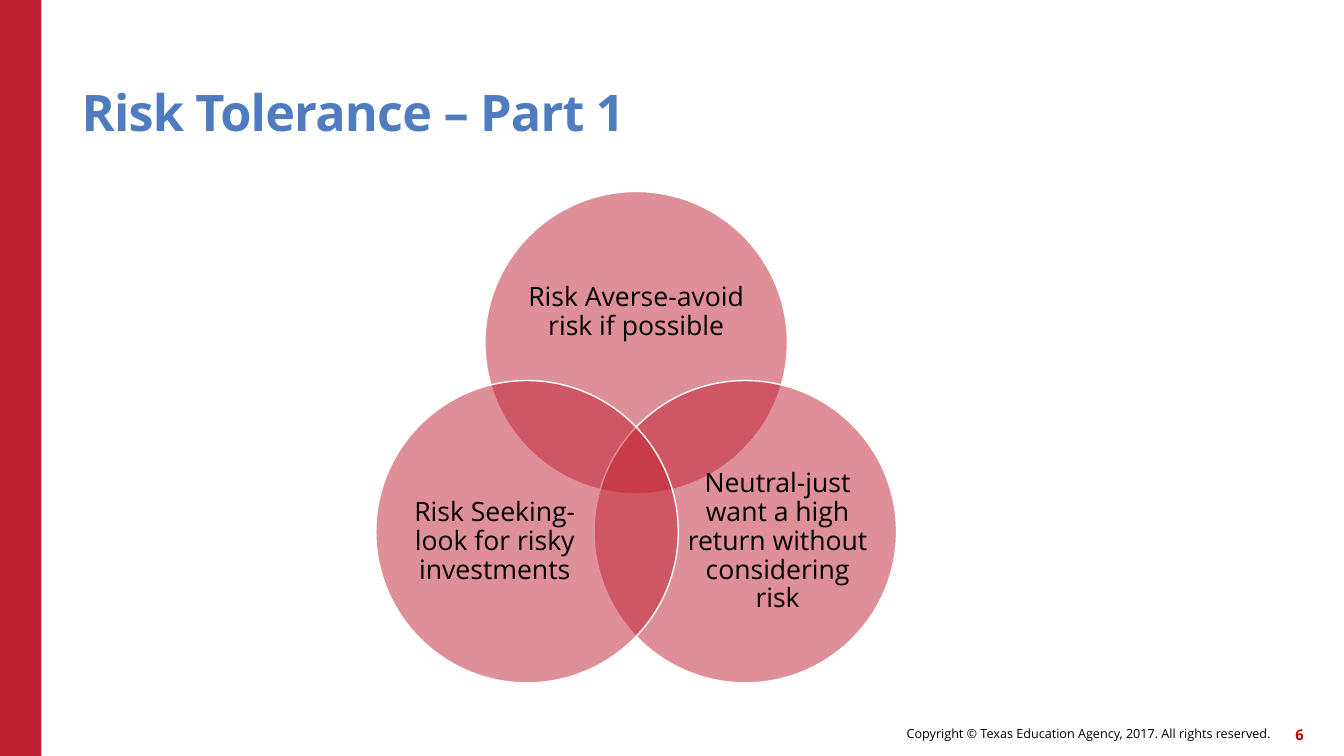
import math
import pptx
import pptx.util
import pptx.dml.color
import pptx.enum.shapes
import pptx.enum.text
import pptx.oxml
import pptx.oxml.ns

ALIGN = pptx.enum.text.PP_ALIGN
ANCHOR = pptx.enum.text.MSO_ANCHOR
SHAPE = pptx.enum.shapes.MSO_SHAPE

WIDTH, HEIGHT = 13.33, 7.5
FONT = "Open Sans"
RED = "C02033"
TITLE = "Risk Tolerance – Part 1"
COPYRIGHT = "Copyright © Texas Education Agency, 2017. All rights reserved."
PAGE = "6"

CENTER = (6.31, 4.65)
ORBIT, RADIUS = 1.25, 1.5
ATTITUDES = [
    {"text": "Risk Averse-avoid risk if possible",
     "angle": -90, "shift": (0, -0.3), "size": (2.2, 1.35)},
    {"text": "Neutral-just want a high return without considering risk",
     "angle": 30, "shift": (0.32, 0.1), "size": (1.8, 1.65)},
    {"text": "Risk Seeking-look for risky investments",
     "angle": 150, "shift": (-0.32, 0.1), "size": (1.8, 1.65)},
]


def rgb(color):
    return pptx.dml.color.RGBColor.from_string(color)


def inches(*values):
    return [pptx.util.Inches(v) for v in values]


def centered(x, y, w, h):
    return x - w / 2, y - h / 2, w, h


def add_filled(slide, kind, box, color):
    sp = slide.shapes.add_shape(kind, *inches(*box))
    sp.shadow.inherit = False
    sp.fill.solid()
    sp.fill.fore_color.rgb = rgb(color)
    sp.line.fill.background()
    return sp


def write(sp, text, size, color, align, anchor=ANCHOR.MIDDLE, bold=False, spacing=None):
    tf = sp.text_frame
    frame = {"word_wrap": True, "auto_size": pptx.enum.text.MSO_AUTO_SIZE.NONE,
             "vertical_anchor": anchor, "margin_left": 0, "margin_right": 0,
             "margin_top": 0, "margin_bottom": 0}
    for name, value in frame.items():
        setattr(tf, name, value)
    p = tf.paragraphs[0]
    p.alignment = align
    p.line_spacing = spacing
    r = p.add_run()
    r.text = text
    for name, value in {"name": FONT, "size": pptx.util.Pt(size), "bold": bold}.items():
        setattr(r.font, name, value)
    r.font.color.rgb = rgb(color)
    return r


def add_text(slide, box, *args, **kwargs):
    return write(slide.shapes.add_textbox(*inches(*box)), *args, **kwargs)


def add_circle(slide, x, y):
    sp = add_filled(slide, SHAPE.OVAL, centered(x, y, 2 * RADIUS, 2 * RADIUS), RED)
    fill = sp.fill._xPr.find(pptx.oxml.ns.qn("a:solidFill"))
    alpha = pptx.oxml.parse_xml(
        '<a:alpha %s val="50000"/>' % pptx.oxml.ns.nsdecls("a"))
    fill[0].append(alpha)
    sp.line.color.rgb = rgb("FFFFFF")
    sp.line.width = pptx.util.Pt(1)


def main():
    prs = pptx.Presentation()
    prs.slide_width, prs.slide_height = inches(WIDTH, HEIGHT)
    slide = prs.slides.add_slide(prs.slide_layouts[5])

    title = slide.shapes.title
    title.left, title.top, title.width, title.height = inches(0.81, 0.45, 11, 0.96)
    r = write(title, TITLE, 36, "4E7CBE", ALIGN.LEFT, ANCHOR.BOTTOM, True, 0.9)
    r.font._element.set("spc", "-60")

    add_filled(slide, SHAPE.RECTANGLE, (0, 0, 0.41, HEIGHT), RED)
    add_text(slide, (6.14, 7.12, 6.46, 0.32), COPYRIGHT, 9, "000000", ALIGN.RIGHT)
    add_text(slide, (12.51, 7.13, 0.42, 0.32), PAGE, 10.5, "C00000", ALIGN.RIGHT, bold=True)

    for attitude in ATTITUDES:
        angle = math.radians(attitude["angle"])
        x = CENTER[0] + ORBIT * math.cos(angle)
        y = CENTER[1] + ORBIT * math.sin(angle)
        dx, dy = attitude["shift"]
        add_circle(slide, x, y)
        add_text(slide, centered(x + dx, y + dy, *attitude["size"]),
                 attitude["text"], 19, "000000", ALIGN.CENTER, spacing=0.9)

    prs.save("out.pptx")


if __name__ == "__main__":
    main()
